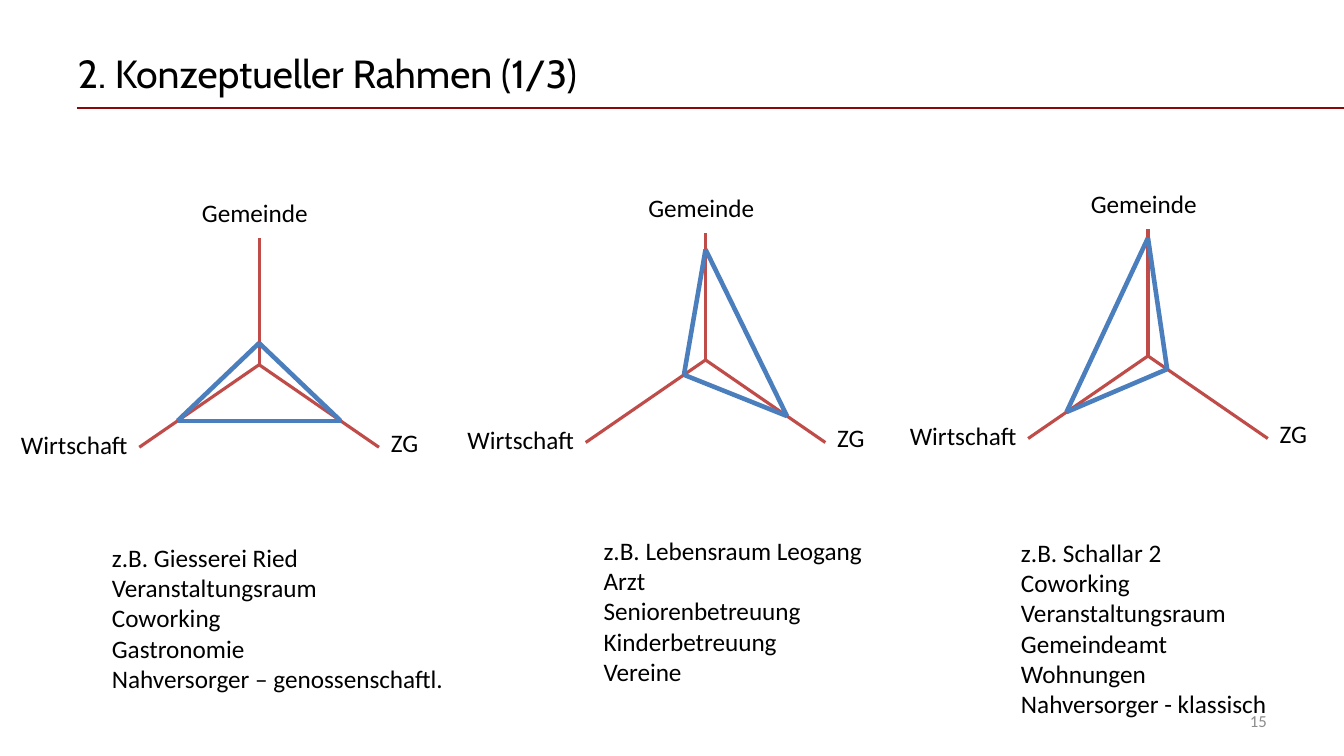
"""Builds the slide on the conceptual framework with three stakeholder profiles."""
from dataclasses import dataclass

from lxml import etree
from pptx import Presentation
from pptx import util as u
from pptx.dml.color import RGBColor
from pptx.enum import shapes, text
from pptx.oxml.ns import qn


@dataclass(frozen=True)
class Theme:
    """Colours, fonts and type sizes of the slide."""
    ink: str = "000000"
    muted: str = "8C8C8C"
    rule: str = "8C070A"
    axis: str = "BF4C48"
    profile: str = "4B7EBC"
    title_font: str = "Cabin"
    body_font: str = "Calibri"
    title_size: float = 28
    body_size: float = 18
    number_size: float = 12


AXES = [(0, -3.2), (-3.02, 2.08), (3.02, 2.08)]
AXIS_LABELS = [
    ("Gemeinde", -1.69, -4.34, 3.23),
    ("Wirtschaft", -6.25, 1.5, 3.25),
    ("ZG", 3.07, 1.45, 1.22),
]
EXAMPLES = [
    ((6.53, 9.19), (0.17, 0.68, 0.68), (2.57, 13.54, 8.97),
     ["z.B. Giesserei Ried", "Veranstaltungsraum", "Coworking", "Gastronomie",
      "Nahversorger – genossenschaftl."]),
    ((17.78, 9.07), (0.87, 0.18, 0.68), (14.96, 13.36, 7.11),
     ["z.B. Lebensraum Leogang", "Arzt", "Seniorenbetreuung",
      "Kinderbetreuung", "Vereine"]),
    ((28.93, 8.97), (0.93, 0.68, 0.16), (25.48, 13.41, 6.76),
     ["z.B. Schallar 2", "Coworking", "Veranstaltungsraum", "Gemeindeamt",
      "Wohnungen", "Nahversorger - klassisch"]),
]


class SlideBuilder:
    """Draws the elements of one slide in one theme, with lengths in centimetres."""

    def __init__(self, slide, theme):
        """Keep the slide and its theme."""
        self.slide = slide
        self.theme = theme

    def format_text(self, frame, font, size, color, align):
        """Give all paragraphs of a text frame the same look."""
        for paragraph in frame.paragraphs:
            paragraph.alignment = align
            for run in paragraph.runs:
                run.font.name = font
                run.font.size = u.Pt(size)
                run.font.color.rgb = RGBColor.from_string(color)

    def title(self, wording, left, top, width, height):
        """Fill and place the title placeholder."""
        shape = self.slide.shapes.title
        shape.left, shape.top = u.Cm(left), u.Cm(top)
        shape.width, shape.height = u.Cm(width), u.Cm(height)
        frame = shape.text_frame
        frame.text = wording
        frame.auto_size = text.MSO_AUTO_SIZE.NONE
        frame.vertical_anchor = text.MSO_ANCHOR.MIDDLE
        self.format_text(frame, self.theme.title_font, self.theme.title_size,
                         self.theme.ink, text.PP_ALIGN.LEFT)

    def line(self, start, end, color, weight):
        """Draw a straight line without shadow."""
        connector = self.slide.shapes.add_connector(
            shapes.MSO_CONNECTOR.STRAIGHT,
            *(u.Cm(value) for value in (*start, *end)))
        connector.line.color.rgb = RGBColor.from_string(color)
        connector.line.width = u.Pt(weight)
        etree.SubElement(connector._element.spPr, qn("a:effectLst"))

    def text_box(self, lines, left, top, width, height):
        """Add a body text box with one paragraph per line."""
        shape = self.slide.shapes.add_textbox(
            u.Cm(left), u.Cm(top), u.Cm(width), u.Cm(height))
        frame = shape.text_frame
        frame.text = "\n".join(lines)
        frame.word_wrap = False
        self.format_text(frame, self.theme.body_font, self.theme.body_size,
                         self.theme.ink, text.PP_ALIGN.LEFT)

    def page_number(self, number, left, top, width, height):
        """Add the right-aligned page number."""
        shape = self.slide.shapes.add_textbox(
            u.Cm(left), u.Cm(top), u.Cm(width), u.Cm(height))
        frame = shape.text_frame
        frame.text = number
        frame.word_wrap = True
        frame.vertical_anchor = text.MSO_ANCHOR.MIDDLE
        self.format_text(frame, self.theme.body_font, self.theme.number_size,
                         self.theme.muted, text.PP_ALIGN.RIGHT)

    def radar(self, center, scores):
        """Draw three labelled axes and the triangle joining the scores on them."""
        x, y = center
        for dx, dy in AXES:
            self.line(center, (x + dx, y + dy), self.theme.axis, 2.25)
        corners = [(x + score * dx, y + score * dy)
                   for score, (dx, dy) in zip(scores, AXES)]
        for start, end in zip(corners, corners[1:] + corners[:1]):
            self.line(start, end, self.theme.profile, 3.25)
        for label, dx, dy, width in AXIS_LABELS:
            self.text_box([label], x + dx, y + dy, width, 1.02)


def main():
    """Build and save the presentation."""
    presentation = Presentation()
    presentation.slide_width = u.Cm(33.87)
    presentation.slide_height = u.Cm(19.05)
    slide = presentation.slides.add_slide(presentation.slide_layouts[5])
    builder = SlideBuilder(slide, Theme())
    builder.line((1.93, 2.72), (33.87, 2.72), builder.theme.rule, 1.25)
    builder.title("2. Konzeptueller Rahmen (1/3)", 1.7, 0.76, 30.48, 2.16)
    for center, scores, (left, top, width), lines in EXAMPLES:
        builder.radar(center, scores)
        builder.text_box(lines, left, top, width, 4.88)
    builder.page_number("15", 24.28, 17.65, 7.9, 1.02)
    presentation.save("out.pptx")


if __name__ == "__main__":
    main()
